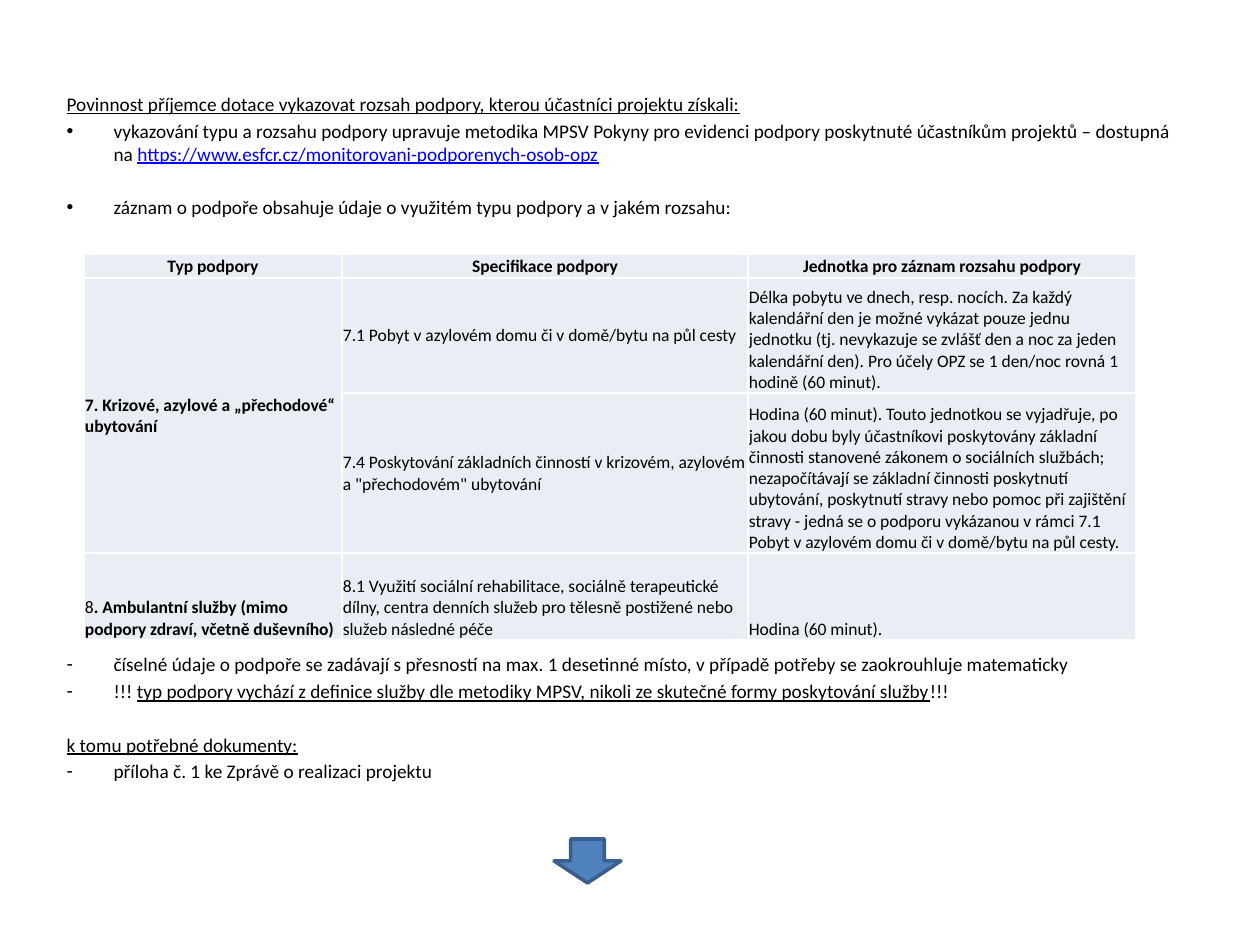
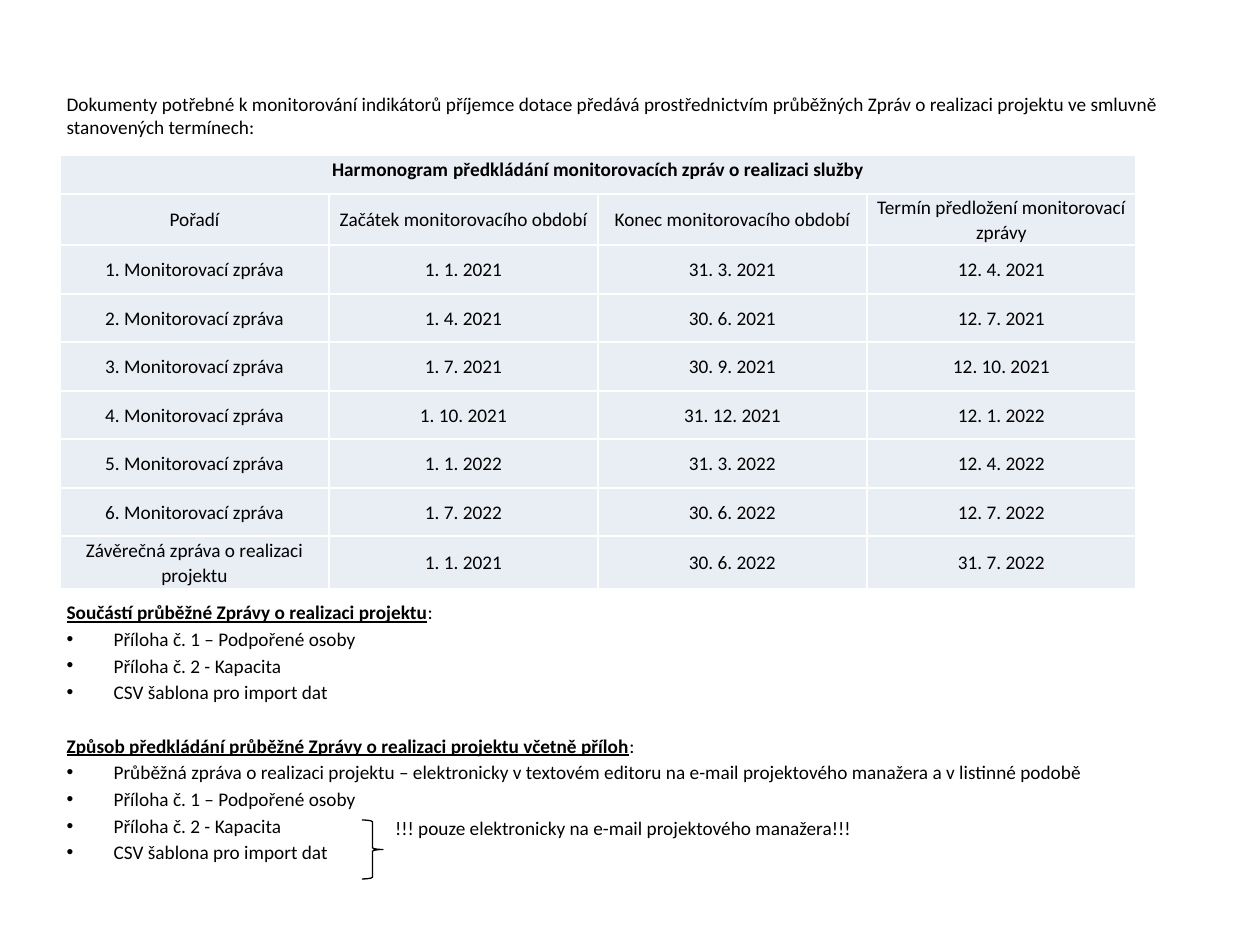
from pptx import Presentation
from pptx.dml.color import RGBColor
from pptx.enum.shapes import MSO_SHAPE
from pptx.enum.text import MSO_ANCHOR, MSO_AUTO_SIZE, PP_ALIGN
from pptx.oxml.ns import qn
from pptx.util import Emu, Pt
from lxml.etree import SubElement

# Shared look
FONT = "Calibri"
BLACK = RGBColor(0x00, 0x00, 0x00)
WHITE = RGBColor(0xFF, 0xFF, 0xFF)
LINK_BLUE = RGBColor(0x00, 0x00, 0xFF)
CELL_FILL = RGBColor(0xE9, 0xED, 0xF4)
ARROW_FILL = RGBColor(0x4F, 0x81, 0xBD)
ARROW_LINE = RGBColor(0x3A, 0x5F, 0x8C)

PX_PER_INCH = 126
BODY_BOX = (54, 86, 1134, 814)
BULLET_INDENT = 47
LINE_GAP = 2  # points before an ordinary paragraph
BLOCK_GAP = 17.4  # points before a new block

# Slide 1 content
SUPPORT_HEADERS = ["Typ podpory", "Specifikace podpory", "Jednotka pro záznam rozsahu podpory"]
SUPPORT_ROWS = [
    ["7. Krizové, azylové a „přechodové“ ubytování",
     "7.1 Pobyt v azylovém domu či v domě/bytu na půl cesty",
     "Délka pobytu ve dnech, resp. nocích. Za každý kalendářní den je možné vykázat pouze "
     "jednu jednotku (tj. nevykazuje se zvlášť den a noc za jeden kalendářní den). Pro účely "
     "OPZ se 1 den/noc rovná 1 hodině (60 minut)."],
    [None,
     "7.4 Poskytování základních činností v krizovém, azylovém a \"přechodovém\" ubytování",
     "Hodina (60 minut). Touto jednotkou se vyjadřuje, po jakou dobu byly účastníkovi "
     "poskytovány základní činnosti stanovené zákonem o sociálních službách; nezapočítávají "
     "se základní činnosti poskytnutí ubytování, poskytnutí stravy nebo pomoc při zajištění "
     "stravy - jedná se o podporu vykázanou v rámci 7.1 Pobyt v azylovém domu či v domě/bytu "
     "na půl cesty."],
    [[("8", {}), (". Ambulantní služby (mimo podpory zdraví, včetně duševního)", {"bold": True})],
     "8.1 Využití sociální rehabilitace, sociálně terapeutické dílny, centra denních služeb "
     "pro tělesně postižené nebo služeb následné péče",
     "Hodina (60 minut)."],
]

# Slide 2 content
SCHEDULE_ROWS = [
    ["Pořadí", "Začátek monitorovacího období", "Konec monitorovacího období",
     "Termín předložení monitorovací zprávy"],
    ["1. Monitorovací zpráva", "1. 1. 2021", "31. 3. 2021", "12. 4. 2021"],
    ["2. Monitorovací zpráva", "1. 4. 2021", "30. 6. 2021", "12. 7. 2021"],
    ["3. Monitorovací zpráva", "1. 7. 2021", "30. 9. 2021", "12. 10. 2021"],
    ["4. Monitorovací zpráva", "1. 10. 2021", "31. 12. 2021", "12. 1. 2022"],
    ["5. Monitorovací zpráva", "1. 1. 2022", "31. 3. 2022", "12. 4. 2022"],
    ["6. Monitorovací zpráva", "1. 7. 2022", "30. 6. 2022", "12. 7. 2022"],
    ["Závěrečná zpráva o realizaci projektu", "1. 1. 2021", "30. 6. 2022", "31. 7. 2022"],
]
ATTACHMENTS = ["Příloha č. 1 – Podpořené osoby", "Příloha č. 2 - Kapacita",
               "CSV šablona pro import dat"]


def px(length):
    return Emu(round(length * 914400 / PX_PER_INCH))


def box(left, top, width, height):
    return px(left), px(top), px(width), px(height)


def write_text(paragraph, content, size=11, bold=False, underline=False, color=BLACK,
               align=None, before=None, line_spacing=None):
    """Fill a paragraph from a string or from (text, format) pairs."""
    if align is not None:
        paragraph.alignment = align
    if line_spacing is not None:
        paragraph.line_spacing = line_spacing
    if before is not None:
        paragraph.space_before = Pt(before)
    pieces = [(content, {})] if isinstance(content, str) else content
    for text, changes in pieces:
        look = {"size": size, "bold": bold, "underline": underline, "color": color, **changes}
        run = paragraph.add_run()
        run.text = text
        run.font.name = FONT
        run.font.size = Pt(look["size"])
        run.font.bold = look["bold"]
        run.font.underline = look["underline"]
        run.font.color.rgb = look["color"]


def set_bullet(paragraph, mark):
    properties = paragraph._p.get_or_add_pPr()
    indent = px(BULLET_INDENT) if mark else 0
    properties.set("marL", str(indent))
    properties.set("indent", str(-indent))
    if mark:
        SubElement(properties, qn("a:buChar")).set("char", mark)
    else:
        SubElement(properties, qn("a:buNone"))


def add_body_slide(presentation, lines):
    """Add a slide whose body holds (bullet, content, space before) lines."""
    slide = presentation.slides.add_slide(presentation.slide_layouts[1])
    title = slide.shapes.title._element
    title.getparent().remove(title)
    body = slide.placeholders[1]
    body.left, body.top, body.width, body.height = box(*BODY_BOX)
    frame = body.text_frame
    frame.auto_size = MSO_AUTO_SIZE.NONE
    for index, (mark, content, before) in enumerate(lines):
        paragraph = frame.add_paragraph() if index else frame.paragraphs[0]
        write_text(paragraph, content, before=before)
        set_bullet(paragraph, mark)
    return slide


def add_table(slide, left, top, columns, rows):
    frame = slide.shapes.add_table(len(rows), len(columns),
                                   *box(left, top, sum(columns), sum(rows)))
    table = frame.table
    table.first_row = table.horz_banding = False
    for column, width in zip(table.columns, columns):
        column.width = px(width)
    for row, height in zip(table.rows, rows):
        row.height = px(height)
    for cell in table.iter_cells():
        add_borders(cell)
        cell.fill.solid()
        cell.fill.fore_color.rgb = CELL_FILL
    return table


def add_borders(cell):
    properties = cell._tc.get_or_add_tcPr()
    for side in ("lnL", "lnR", "lnT", "lnB"):
        line = SubElement(properties, qn(f"a:{side}"))
        line.set("w", str(Pt(1)))
        fill = SubElement(line, qn("a:solidFill"))
        SubElement(fill, qn("a:srgbClr")).set("val", str(WHITE))


def write_cell(cell, content, margins, anchor=MSO_ANCHOR.MIDDLE, **text_format):
    cell.margin_left, cell.margin_top, cell.margin_right, cell.margin_bottom = map(px, margins)
    cell.vertical_anchor = anchor
    write_text(cell.text_frame.paragraphs[0], content, **text_format)


def add_preset(slide, preset, place, line, line_width, fill=None):
    shape = slide.shapes.add_shape(preset, *box(*place))
    shape.shadow.inherit = False
    if fill is None:
        shape.fill.background()
    else:
        shape.fill.solid()
        shape.fill.fore_color.rgb = fill
    shape.line.color.rgb = line
    shape.line.width = Pt(line_width)


def add_note(slide, place, content):
    frame = slide.shapes.add_textbox(*box(*place)).text_frame
    frame.word_wrap = True
    frame.margin_left = frame.margin_top = frame.margin_right = frame.margin_bottom = 0
    write_text(frame.paragraphs[0], content)


def add_support_slide(presentation):
    underlined = {"underline": True}
    slide = add_body_slide(presentation, [
        (None, [("Povinnost příjemce dotace vykazovat rozsah podpory, kterou účastníci "
                 "projektu získali:", underlined)], LINE_GAP),
        ("•", [("vykazování typu a rozsahu podpory upravuje metodika MPSV Pokyny pro evidenci "
                "podpory poskytnuté účastníkům projektů – dostupná na ", {}),
               ("https://www.esfcr.cz/monitorovani-podporenych-osob-opz",
                {"underline": True, "color": LINK_BLUE})], LINE_GAP),
        ("•", "záznam o podpoře obsahuje údaje o využitém typu podpory a v jakém rozsahu:",
         BLOCK_GAP),
        ("-", "číselné údaje o podpoře se zadávají s přesností na max. 1 desetinné místo, "
              "v případě potřeby se zaokrouhluje matematicky", 248),
        ("-", [("!!! ", {}),
               ("typ podpory vychází z definice služby dle metodiky MPSV, nikoli ze skutečné "
                "formy poskytování služby", underlined),
               ("!!!", {})], LINE_GAP),
        (None, [("k tomu potřebné dokumenty:", underlined)], BLOCK_GAP),
        ("-", "příloha č. 1 ke Zprávě o realizaci projektu", LINE_GAP),
    ])

    # Types of support
    table = add_table(slide, 84, 254, [258, 406, 388], [24, 115, 160, 87])
    margins = (1, 1, 1, 0)
    for column, header in enumerate(SUPPORT_HEADERS):
        write_cell(table.cell(0, column), header, margins, size=10, bold=True,
                   align=PP_ALIGN.CENTER)
    for row, contents in enumerate(SUPPORT_ROWS, start=1):
        for column, content in enumerate(contents):
            if content is None:
                continue
            at_bottom = column == 2 or row == len(SUPPORT_ROWS)
            write_cell(table.cell(row, column), content, margins, size=10,
                       anchor=MSO_ANCHOR.BOTTOM if at_bottom else MSO_ANCHOR.MIDDLE,
                       bold=column == 0 and isinstance(content, str))
    table.cell(1, 0).merge(table.cell(2, 0))

    add_preset(slide, MSO_SHAPE.DOWN_ARROW, (554, 839, 67, 44), ARROW_LINE, 2, ARROW_FILL)


def add_schedule_slide(presentation):
    heading = {"bold": True, "underline": True}
    attachments = [("•", name, LINE_GAP) for name in ATTACHMENTS]
    slide = add_body_slide(presentation, [
        (None, "Dokumenty potřebné k monitorování indikátorů příjemce dotace předává "
               "prostřednictvím průběžných Zpráv o realizaci projektu ve smluvně stanovených "
               "termínech:", LINE_GAP),
        (None, [("Součástí průběžné Zprávy o realizaci projektu", heading), (":", {})], 264),
        *attachments,
        (None, [("Způsob předkládání průběžné Zprávy o realizaci projektu včetně příloh",
                 heading), (":", {})], BLOCK_GAP),
        ("•", "Průběžná zpráva o realizaci projektu – elektronicky v textovém editoru na e-mail "
              "projektového manažera a v listinné podobě", LINE_GAP),
        *attachments,
    ])

    # Schedule of reports
    table = add_table(slide, 60, 155, [269] * 4, [39, 51] + [49, 48] * 3 + [53])
    cell_format = {"margins": (9, 0, 9, 0), "align": PP_ALIGN.CENTER, "line_spacing": 1.07}
    table.cell(0, 0).merge(table.cell(0, 3))
    write_cell(table.cell(0, 0),
               [("Harmonogram", {}), (" ", {"size": 12}),
                ("předkládání monitorovacích zpráv o realizaci služby", {})],
               anchor=MSO_ANCHOR.TOP, bold=True, **cell_format)
    for row, contents in enumerate(SCHEDULE_ROWS, start=1):
        for column, content in enumerate(contents):
            write_cell(table.cell(row, column), content, **cell_format)

    # Brace and its note
    add_preset(slide, MSO_SHAPE.RIGHT_BRACE, (362, 820, 21, 59), BLACK, 0.75)
    add_note(slide, (395, 816, 500, 24), "!!! pouze elektronicky na e-mail projektového manažera!!!")


def main():
    presentation = Presentation()
    presentation.slide_width, presentation.slide_height = px(1260), px(945)
    add_support_slide(presentation)
    add_schedule_slide(presentation)
    presentation.save("out.pptx")


if __name__ == "__main__":
    main()
